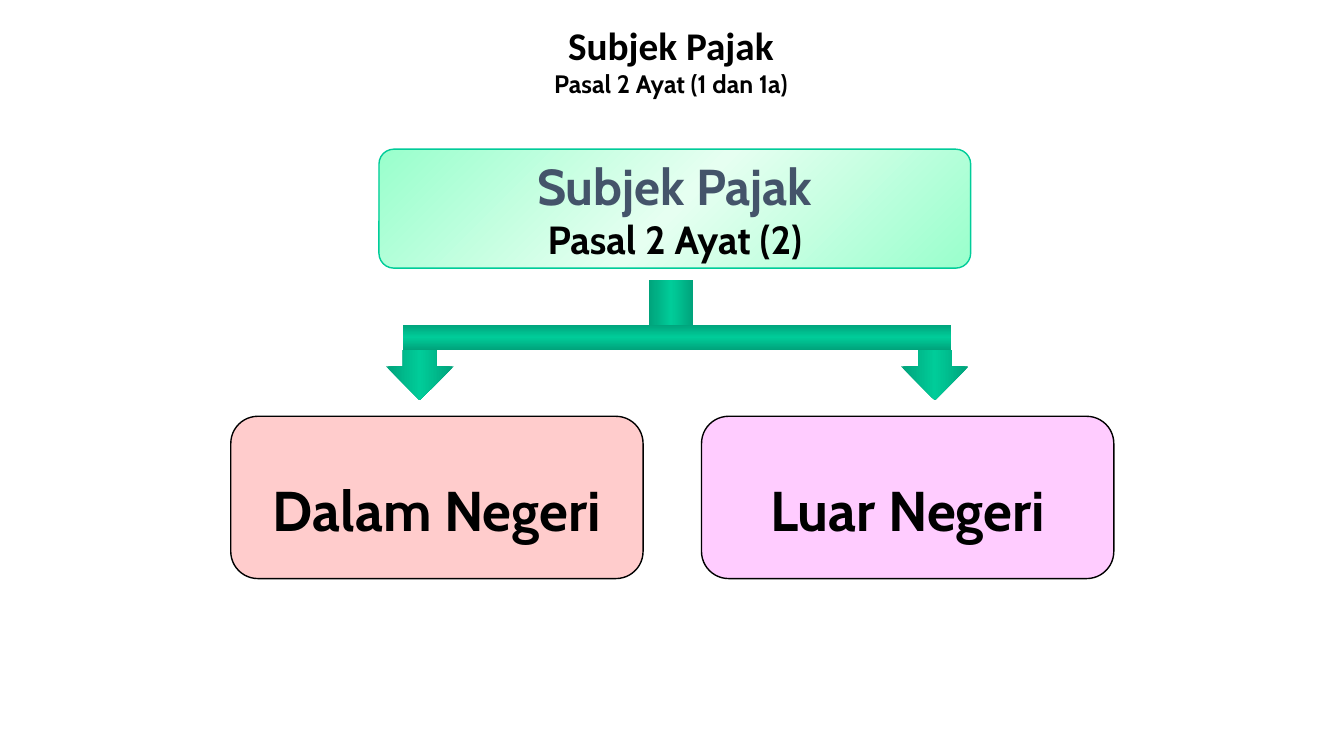
from copy import deepcopy
from dataclasses import dataclass

from pptx import Presentation
from pptx.dml.color import RGBColor
from pptx.enum.shapes import MSO_SHAPE
from pptx.enum.text import MSO_ANCHOR, MSO_AUTO_SIZE, PP_ALIGN
from pptx.oxml.ns import qn
from pptx.util import Inches, Pt

COLUMNS, ROWS = 160, 90


@dataclass(frozen=True)
class Theme:
    """Colours, fonts and type sizes of the slide."""
    ink: str = "000000"
    slate: str = "44546A"
    green: str = "00CC99"
    deep_green: str = "00A37B"
    mint: str = "99FFCC"
    pale_mint: str = "E6FFF1"
    rose: str = "FFCCCC"
    lilac: str = "FFCCFF"
    heading_font: str = "Calibri"
    body_font: str = "Cabin"
    title: int = 28
    subtitle: int = 18
    banner: int = 36
    article: int = 28
    branch: int = 40


THEME = Theme()


def place(deck, column, row, width, height):
    """Turn grid units into left, top, width and height."""
    across, down = deck.slide_width / COLUMNS, deck.slide_height / ROWS
    return (round(column * across), round(row * down),
            round(width * across), round(height * down))


def write(shape, lines, spacing=1.0):
    """Fill a shape with centred bold lines of (text, size, font, colour)."""
    frame = shape.text_frame
    frame.auto_size = MSO_AUTO_SIZE.NONE
    frame.word_wrap = False
    frame.vertical_anchor = MSO_ANCHOR.MIDDLE
    for index, (text, size, font, colour) in enumerate(lines):
        para = frame.add_paragraph() if index else frame.paragraphs[0]
        para.alignment = PP_ALIGN.CENTER
        para.line_spacing = spacing
        para.space_before = Pt(0)
        span = para.add_run()
        span.text = text
        span.font.size = Pt(size)
        span.font.name = font
        span.font.bold = True
        span.font.color.rgb = RGBColor.from_string(colour)


def add_form(page, kind, area, adjustments=(), outline=None):
    """Add a preset shape without shadow, outlined only on request."""
    shape = page.shapes.add_shape(kind, *area)
    shape.shadow.inherit = False
    for index, value in enumerate(adjustments):
        shape.adjustments[index] = value
    if outline:
        shape.line.color.rgb = RGBColor.from_string(outline)
        shape.line.width = Pt(1)
    else:
        shape.line.fill.background()
    return shape


def shade(shape, edge, middle, angle):
    """Give a shape a gradient that is symmetric about its middle."""
    shape.fill.gradient()
    stops = shape.element.spPr.find(qn("a:gradFill")).find(qn("a:gsLst"))
    stops.append(deepcopy(stops[0]))
    shape.fill.gradient_angle = angle
    for index, stop in enumerate(shape.fill.gradient_stops):
        stop.position = index / 2
        stop.color.rgb = RGBColor.from_string(middle if index == 1 else edge)


def add_title(deck, page):
    """Move and fill the title placeholder."""
    title = page.shapes.title
    title.left, title.top, title.width, title.height = place(deck, 36.48, 0.12, 86.76, 14.04)
    write(title, [
        ("Subjek Pajak", THEME.title, THEME.heading_font, THEME.ink),
        ("Pasal 2 Ayat (1 dan 1a)", THEME.subtitle, THEME.body_font, THEME.ink),
    ])


def add_banner(deck, page):
    """Add the box at the root of the tree."""
    banner = add_form(page, MSO_SHAPE.ROUNDED_RECTANGLE,
                      place(deck, 45.12, 17.76, 70.44, 14.16), [0.125], THEME.green)
    shade(banner, THEME.mint, THEME.pale_mint, 315)
    write(banner, [
        ("Subjek Pajak", THEME.banner, THEME.body_font, THEME.slate),
        ("Pasal 2 Ayat (2)", THEME.article, THEME.body_font, THEME.ink),
    ])


def add_branch(deck, page, column, text, colour):
    """Add one of the boxes at the foot of the tree."""
    branch = add_form(page, MSO_SHAPE.ROUNDED_RECTANGLE,
                      place(deck, column, 49.56, 49.08, 19.32), [0.167], THEME.ink)
    branch.fill.solid()
    branch.fill.fore_color.rgb = RGBColor.from_string(colour)
    write(branch, [(text, THEME.branch, THEME.body_font, THEME.ink)], 1.35)


def add_pipe(deck, page, kind, cells, angle=0, adjustments=()):
    """Add one green piece of the connecting fork."""
    pipe = add_form(page, kind, place(deck, *cells), adjustments)
    shade(pipe, THEME.deep_green, THEME.green, angle)


def main():
    """Build and save the slide."""
    deck = Presentation()
    deck.slide_width, deck.slide_height = Inches(13.33), Inches(7.5)
    page = deck.slides.add_slide(deck.slide_layouts[5])
    add_title(deck, page)
    add_banner(deck, page)
    add_branch(deck, page, 27.48, "Dalam Negeri", THEME.rose)
    add_branch(deck, page, 83.52, "Luar Negeri", THEME.lilac)
    add_pipe(deck, page, MSO_SHAPE.RECTANGLE, (48, 38.64, 65.28, 3), 90)
    add_pipe(deck, page, MSO_SHAPE.RECTANGLE, (77.28, 33.36, 5.28, 5.28))
    for column in (45.96, 107.28):
        add_pipe(deck, page, MSO_SHAPE.DOWN_ARROW, (column, 41.64, 8.04, 6),
                 adjustments=(0.5, 0.667))
    deck.save("out.pptx")


if __name__ == "__main__":
    main()
